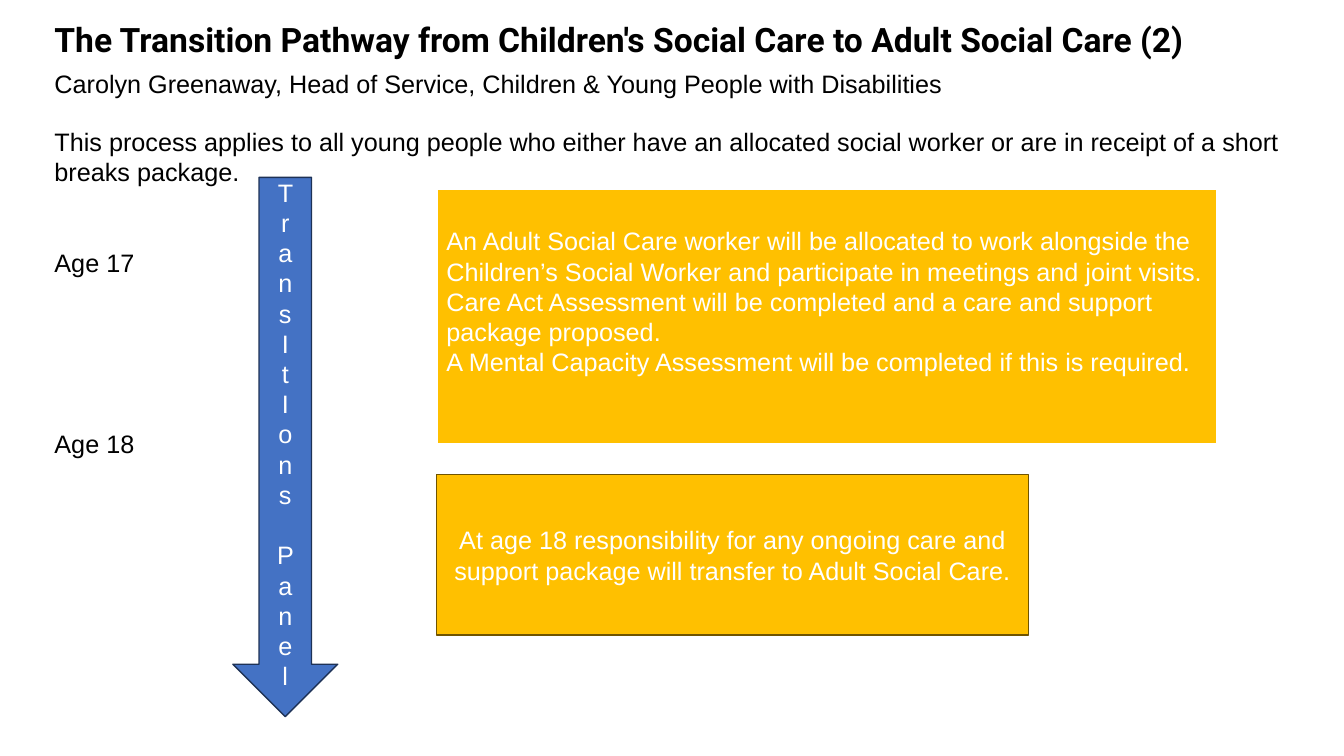
import pptx
import pptx.util
import pptx.dml.color
import pptx.enum.shapes
import pptx.enum.text
import pptx.oxml.ns
import lxml.etree

Inches = pptx.util.Inches
Pt = pptx.util.Pt
Align = pptx.enum.text.PP_ALIGN
Anchor = pptx.enum.text.MSO_ANCHOR
Shape = pptx.enum.shapes.MSO_SHAPE


def tint(color, code):
    color.rgb = pptx.dml.color.RGBColor.from_string(code)


def write(shape, lines, code, align=Align.LEFT, anchor=Anchor.MIDDLE, **inset):
    """Fill a shape with (text, points before) lines of 18 point Arial."""
    frame = shape.text_frame
    layout = {"word_wrap": True, "auto_size": pptx.enum.text.MSO_AUTO_SIZE.NONE,
              "vertical_anchor": anchor, **inset}
    for name, value in layout.items():
        setattr(frame, name, value)
    for i, (text, gap) in enumerate(lines):
        para = frame.paragraphs[0] if i == 0 else frame.add_paragraph()
        props = para._p.get_or_add_pPr()
        props.set("marL", "0")
        props.set("indent", "0")
        lxml.etree.SubElement(props, pptx.oxml.ns.qn("a:buNone"))
        look = {"alignment": align, "space_before": Pt(gap), "space_after": Pt(0)}
        for name, value in look.items():
            setattr(para, name, value)
        run = para.add_run()
        run.text = text
        for name, value in {"name": "Arial", "size": Pt(18), "bold": False}.items():
            setattr(run.font, name, value)
        tint(run.font.color, code)


deck = pptx.Presentation()
deck.slide_width = Inches(13.33)
deck.slide_height = Inches(7.5)
slide = deck.slides.add_slide(deck.slide_layouts[1])
title, body = slide.placeholders
row = 21.6  # points from one line of text to the next

# Title and ages
for holder, box in ((title, (0.44, 0.14, 12.1, 0.89)), (body, (0.44, 1.2, 12.45, 6.3))):
    for name, value in zip(("left", "top", "width", "height"), box):
        setattr(holder, name, Inches(value))

write(title, [
    ("The Transition Pathway from Children's Social Care to Adult Social Care (2)", 0),
    ("Carolyn Greenaway, Head of Service, Children & Young People with Disabilities", 6),
], "000000", anchor=Anchor.TOP)
head = title.text_frame.paragraphs[0].runs[0].font
for name, value in {"name": "Roboto", "size": Pt(24), "bold": True}.items():
    setattr(head, name, value)

write(body, [
    ("This process applies to all young people who either have an allocated social "
     "worker or are in receipt of a short breaks package.", 0),
    ("Age 17", 2 * row),
    ("Age 18", 5 * row),
], "000000", anchor=Anchor.TOP)

# Steps and the panel arrow
work = [
    ("An Adult Social Care worker will be allocated to work alongside the Children’s "
     "Social Worker and participate in meetings and joint visits.", 0),
    ("Care Act Assessment will be completed and a care and support package proposed.", 0),
    ("A Mental Capacity Assessment will be completed if this is required.", 0),
]
panel = [("T r a n s I t I o n s", 0), ("P a n e l", row)]
move = [("At age 18 responsibility for any ongoing care and support package will "
         "transfer to Adult Social Care.", 0)]
slim = {"margin_left": Inches(0.16), "margin_right": Inches(0.16)}
steps = [
    (Shape.RECTANGLE, (4.33, 1.87, 7.74, 2.54), "FFC000", "FFFFFF", 1.5,
     work, Align.LEFT, {"margin_bottom": Inches(0.35)}),
    (Shape.DOWN_ARROW, (2.31, 1.76, 1.04, 5.35), "4472C4", "1E3256", 1,
     panel, Align.CENTER, slim),
    (Shape.RECTANGLE, (4.33, 4.71, 5.87, 1.59), "FFC000", "705400", 1,
     move, Align.CENTER, {}),
]
for kind, box, fill, edge, width, lines, align, inset in steps:
    step = slide.shapes.add_shape(kind, *map(Inches, box))
    step.shadow.inherit = False
    step.fill.solid()
    tint(step.fill.fore_color, fill)
    tint(step.line.color, edge)
    step.line.width = Pt(width)
    write(step, lines, "FFFFFF", align, **inset)

deck.save("out.pptx")
